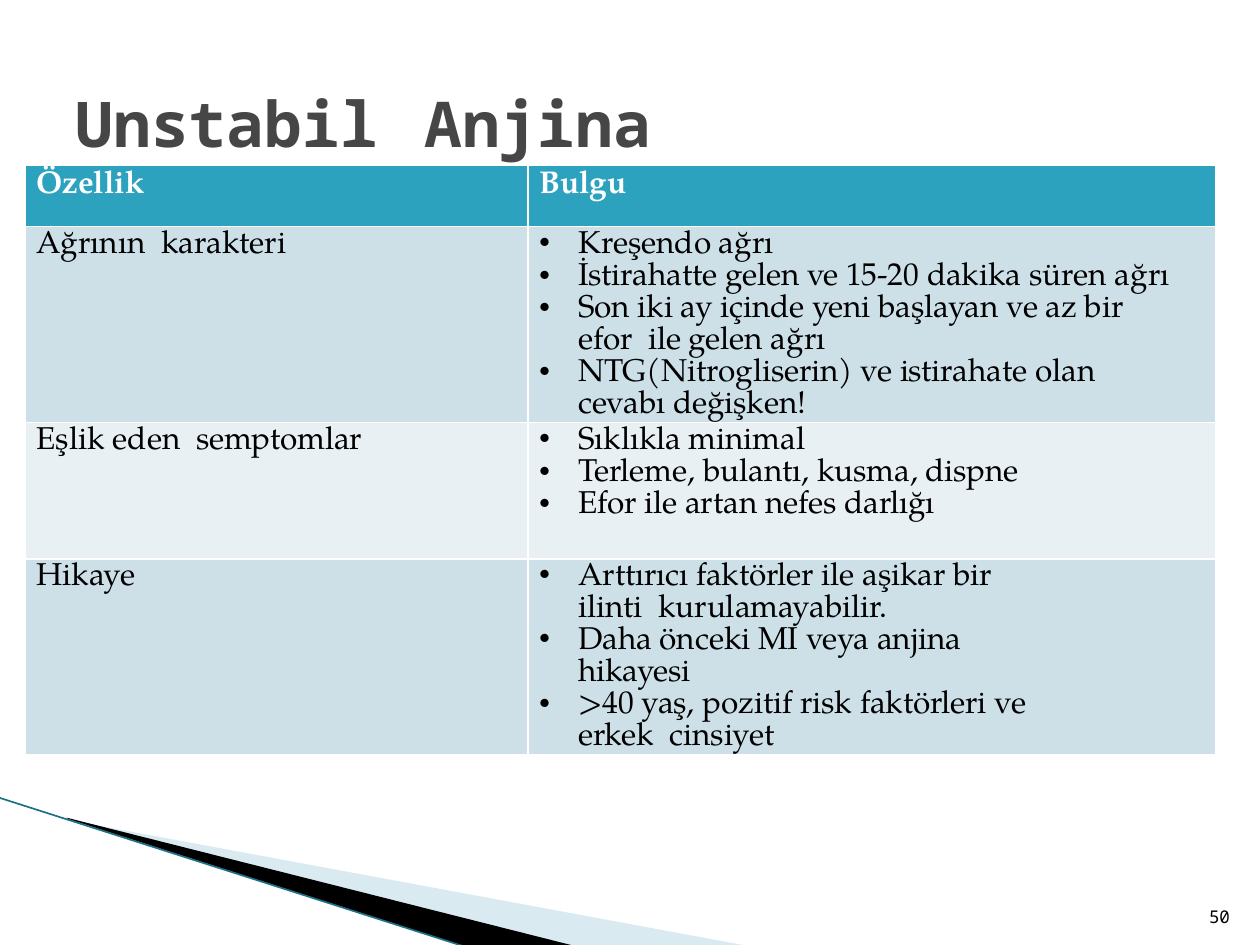
from lxml.etree import SubElement
from pptx import Presentation
from pptx.dml.color import RGBColor
from pptx.enum.text import MSO_ANCHOR, MSO_AUTO_SIZE, PP_ALIGN
from pptx.oxml.ns import qn
from pptx.util import Inches, Pt

COLORS = {
    "title": "464646", "text": "000000", "white": "FFFFFF", "header": "2DA2BF",
    "band_dark": "CDE0E8", "band_light": "E8F0F4",
    "wedge": "A0CBDC", "edge": "1C7186",
}
MONO = "Noto Sans Mono"
SERIF = "TeX Gyre Pagella"
COLUMN_WIDTHS = (3.99, 5.46)
ROW_HEIGHTS = (0.49, 1.38, 1.08, 1.38)
HEADERS = ("Özellik", "Bulgu")
FINDINGS = [
    ("Ağrının  karakteri", [
        ("Kreşendo ağrı", 0),
        ("İstirahatte gelen ve 15-20 dakika süren ağrı", 0),
        ("Son iki ay içinde yeni başlayan ve az bir efor  ile gelen ağrı", 0.31),
        ("NTG(Nitrogliserin) ve istirahate olan cevabı değişken!", 0.31),
    ]),
    ("Eşlik eden  semptomlar", [
        ("Sıklıkla minimal", 0),
        ("Terleme, bulantı, kusma, dispne", 0),
        ("Efor ile artan nefes darlığı", 0),
    ]),
    ("Hikaye", [
        ("Arttırıcı faktörler ile aşikar bir ilinti  kurulamayabilir.", 1.35),
        ("Daha önceki MI veya anjina hikayesi", 1.35),
        (">40 yaş, pozitif risk faktörleri ve erkek  cinsiyet", 1.35),
    ]),
]


def rgb(name):
    """Return the named colour."""
    return RGBColor.from_string(COLORS[name])


def add_run(paragraph, text, size, font, color, bold=False):
    """Add one formatted run to a paragraph."""
    run = paragraph.add_run()
    run.text = text
    run.font.size = Pt(size)
    run.font.name = font
    run.font.bold = bold
    run.font.color.rgb = rgb(color)
    return run


def add_wedge(slide, points, color, opacity=100):
    """Draw a filled wedge through points given in inches."""
    corners = [(Inches(x), Inches(y)) for x, y in points]
    builder = slide.shapes.build_freeform(*corners[0], scale=1.0)
    builder.add_line_segments(corners[1:], close=True)
    wedge = builder.convert_to_shape()
    wedge.shadow.inherit = False
    wedge.fill.solid()
    wedge.fill.fore_color.rgb = rgb(color)
    wedge.line.fill.background()
    if opacity < 100:
        color_element = wedge.fill._xPr.find(qn("a:solidFill"))[0]
        SubElement(color_element, qn("a:alpha"), val=str(opacity * 1000))


def add_corner_decoration(slide):
    """Draw the wedges and the edge line in the lower left corner."""
    add_wedge(slide, [(0.55, 6.51), (5.95, 7.51), (4.56, 7.51), (0.55, 6.5)], "wedge", 40)
    add_wedge(slide, [(0.53, 6.49), (4.57, 7.51), (3.72, 7.52), (0.54, 6.5)], "text")
    edge = slide.shapes.add_connector(
        1, Inches(-0.01), Inches(6.33), Inches(3.71), Inches(7.52))
    edge.line.color.rgb = rgb("edge")
    edge.line.width = Pt(0.95)
    SubElement(edge._element.spPr, qn("a:effectLst"))


def place_title(slide, left, top, width, height):
    """Move the title placeholder into its box and fill it."""
    title = slide.shapes.title
    title.left, title.top, title.width, title.height = map(Inches, (left, top, width, height))
    frame = title.text_frame
    frame.auto_size = MSO_AUTO_SIZE.NONE
    frame.vertical_anchor = MSO_ANCHOR.MIDDLE
    paragraph = frame.paragraphs[0]
    paragraph.alignment = PP_ALIGN.LEFT
    for text, size in (("Unstabil", 36), (" ", 44), ("Anjina", 36)):
        add_run(paragraph, text, size, MONO, "title", True)


def add_page_number(slide, left, top, width, height):
    """Write the page number at the bottom right."""
    box = slide.shapes.add_textbox(*map(Inches, (left, top, width, height)))
    frame = box.text_frame
    frame.word_wrap = True
    frame.vertical_anchor = MSO_ANCHOR.BOTTOM
    paragraph = frame.paragraphs[0]
    paragraph.alignment = PP_ALIGN.RIGHT
    add_run(paragraph, "50", 10, MONO, "text")


def format_cell(cell, fill, top_margin=0.03):
    """Set the fill and margins of a cell."""
    cell.fill.solid()
    cell.fill.fore_color.rgb = rgb(fill)
    cell.margin_left = cell.margin_right = cell.margin_bottom = 0
    cell.margin_top = Inches(top_margin)
    cell.vertical_anchor = MSO_ANCHOR.TOP


def write_cell_text(paragraph, text, color="text", bold=False,
                    left=0.09, indent=0, right=0, spacing=0):
    """Write one indented paragraph of a cell."""
    properties = paragraph._p.get_or_add_pPr()
    for name, value in (("marL", left), ("indent", indent), ("marR", right)):
        properties.set(name, str(Inches(value)))
    paragraph.line_spacing = Pt(18.2)
    run = add_run(paragraph, text, 18, SERIF, color, bold)
    run.font._element.set("spc", str(spacing))


def write_bullets(cell, bullets):
    """Write the bulleted findings of a cell."""
    frame = cell.text_frame
    for index, (text, right) in enumerate(bullets):
        paragraph = frame.add_paragraph() if index else frame.paragraphs[0]
        SubElement(paragraph._p.get_or_add_pPr(), qn("a:buChar"), char="•")
        if index:
            paragraph.space_before = Pt(0.2)
        write_cell_text(paragraph, text, left=0.4, indent=-0.31, right=right, spacing=-5)


def add_findings_table(slide, left, top, width, height):
    """Add the table of features and findings."""
    frame = slide.shapes.add_table(
        len(ROW_HEIGHTS), len(COLUMN_WIDTHS), *map(Inches, (left, top, width, height)))
    table = frame.table
    for column, column_width in zip(table.columns, COLUMN_WIDTHS):
        column.width = Inches(column_width)
    for row, row_height in zip(table.rows, ROW_HEIGHTS):
        row.height = Inches(row_height)
    for index, header in enumerate(HEADERS):
        cell = table.cell(0, index)
        format_cell(cell, "header", top_margin=0.04)
        write_cell_text(cell.text_frame.paragraphs[0], header, "white", True, spacing=-5)
    for index, (feature, bullets) in enumerate(FINDINGS, start=1):
        feature_cell, finding_cell = table.cell(index, 0), table.cell(index, 1)
        for cell in (feature_cell, finding_cell):
            format_cell(cell, "band_dark" if index % 2 else "band_light")
        write_cell_text(feature_cell.text_frame.paragraphs[0], feature)
        write_bullets(finding_cell, bullets)


def main():
    """Build the slide and save it."""
    presentation = Presentation()
    presentation.slide_width = Inches(10)
    presentation.slide_height = Inches(7.5)
    slide = presentation.slides.add_slide(presentation.slide_layouts[5])
    add_corner_decoration(slide)
    add_page_number(slide, 9.46, 7.01, 0.4, 0.4)
    place_title(slide, 0.5, 0.3, 9, 1.25)
    add_findings_table(slide, 0.2, 1.31, sum(COLUMN_WIDTHS), sum(ROW_HEIGHTS))
    presentation.save("out.pptx")


if __name__ == "__main__":
    main()
